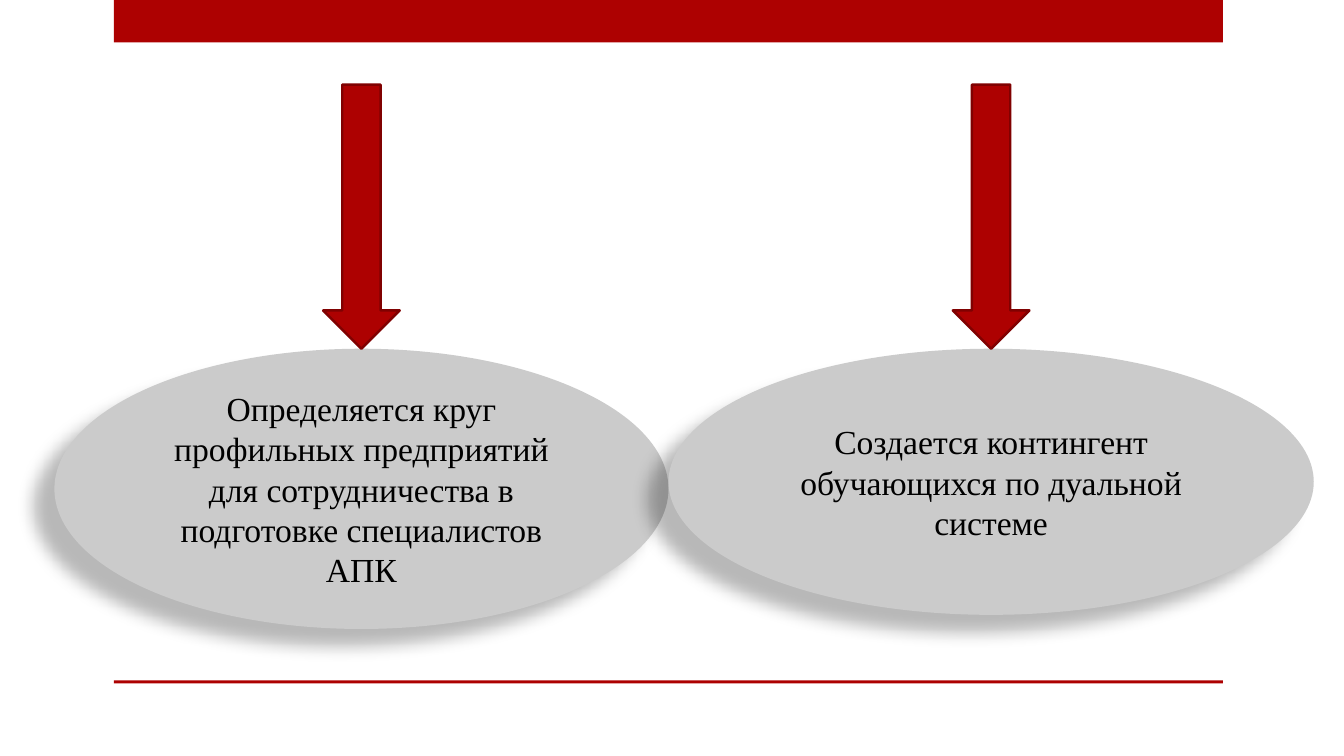
from dataclasses import dataclass

from lxml import etree
from pptx import Presentation
from pptx import util as u
from pptx.dml import color
from pptx.enum import shapes, text
from pptx.oxml import ns

WIDE, HIGH = u.Inches(13.33), u.Inches(7.5)
FONT = "Times New Roman"
HEX = {"red": "AD0101", "edge": "800101", "gray": "CBCBCB", "ink": "000000"}
KIND = shapes.MSO_SHAPE

# All lengths are percentages of the slide's width or height.
BAR_X, BAR_W = 8.48, 82.52
OVAL_TOP = 46.13
ARROW_TOP, ARROW_W = 11.2, 5.7


@dataclass
class Bar:
    top: float
    high: float


@dataclass
class Step:
    left: float
    wide: float
    high: float
    label: str


BARS = [Bar(0, 5.6), Bar(90, 0.4)]
STEPS = [
    Step(4.05, 45.69, 37.07,
         "Определяется круг профильных предприятий для сотрудничества "
         "в подготовке специалистов АПК"),
    Step(49.74, 48.01, 35.2,
         "Создается контингент обучающихся по дуальной системе"),
]


def rgb(name: str) -> color.RGBColor:
    return color.RGBColor.from_string(HEX[name])


def add_form(slide, kind, left: float, top: float, wide: float, high: float,
             fill: str):
    """Add a flat filled shape without outline, placed by percentages."""
    form = slide.shapes.add_shape(
        kind, round(WIDE * left / 100), round(HIGH * top / 100),
        round(WIDE * wide / 100), round(HIGH * high / 100))
    form.shadow.inherit = False
    form.fill.solid()
    form.fill.fore_color.rgb = rgb(fill)
    form.line.fill.background()
    return form


def cast_shade(form) -> None:
    """Give the shape a soft shadow towards the lower left."""
    effects = form.element.spPr.find(ns.qn("a:effectLst"))
    shade = etree.SubElement(
        effects, ns.qn("a:outerShdw"), blurRad=str(u.Pt(11.8)),
        dist=str(u.Pt(19.7)), dir=str(141 * 60000), rotWithShape="0")
    tint = etree.SubElement(shade, ns.qn("a:srgbClr"), val=HEX["ink"])
    etree.SubElement(tint, ns.qn("a:alpha"), val="28000")


def add_oval(slide, step: Step) -> None:
    oval = add_form(slide, KIND.OVAL, step.left, OVAL_TOP, step.wide,
                    step.high, "gray")
    cast_shade(oval)
    frame = oval.text_frame
    frame.word_wrap = True
    frame.vertical_anchor = text.MSO_ANCHOR.MIDDLE
    frame.text = step.label
    para = frame.paragraphs[0]
    para.alignment = text.PP_ALIGN.CENTER
    font = para.runs[0].font
    font.name, font.size = FONT, u.Pt(24)
    font.color.rgb = rgb("ink")


def add_arrow(slide, step: Step) -> None:
    """Point an arrow at the top of the step's oval."""
    left = step.left + (step.wide - ARROW_W) / 2
    arrow = add_form(slide, KIND.DOWN_ARROW, left, ARROW_TOP, ARROW_W,
                     OVAL_TOP - ARROW_TOP, "red")
    arrow.line.color.rgb = rgb("edge")
    arrow.line.width = u.Pt(1.75)


def main() -> None:
    deck = Presentation()
    deck.slide_width, deck.slide_height = WIDE, HIGH
    slide = deck.slides.add_slide(deck.slide_layouts.get_by_name("Blank"))
    for bar in BARS:
        add_form(slide, KIND.RECTANGLE, BAR_X, bar.top, BAR_W, bar.high, "red")
    for step in STEPS:
        add_oval(slide, step)
    for step in STEPS:
        add_arrow(slide, step)
    deck.save("out.pptx")


if __name__ == "__main__":
    main()
